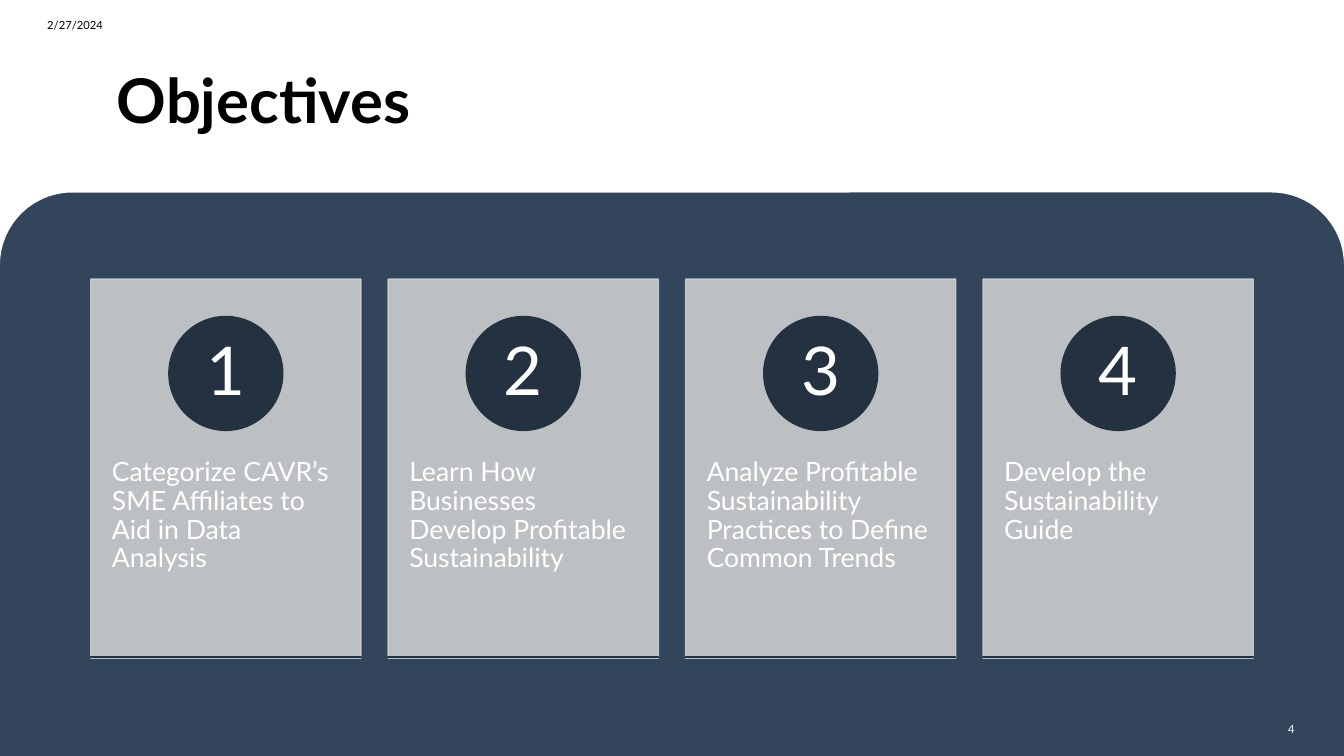
import math

from lxml import etree
from pptx import Presentation
from pptx import util as u
from pptx.dml.color import RGBColor
from pptx.enum import shapes, text
from pptx.oxml import ns

COLORS = {
    "navy": "33455B",
    "dark": "243141",
    "card": "CDCECF",
    "white": "FFFFFF",
    "black": "000000",
}
FONT = "Lato"
WIDTH, HEIGHT = 13.33, 7.5
OBJECTIVES = [
    "Categorize CAVR’s SME Affiliates to Aid in Data Analysis",
    "Learn How Businesses Develop Profitable Sustainability",
    "Analyze Profitable Sustainability Practices to Define Common Trends",
    "Develop the Sustainability Guide",
]
CARD_LEFT, CARD_TOP, CARD_PITCH = 0.9, 2.77, 2.95
CARD_WIDTH, CARD_HEIGHT = 2.68, 3.76
CIRCLE, NUMBER = 1.13, 0.8


def color(name):
    return RGBColor.from_string(COLORS[name])


def set_all(target, values):
    for name, value in values.items():
        setattr(target, name, value)


def set_opacity(shape, percent):
    for fill_color in shape._element.spPr.iter(ns.qn("a:srgbClr")):
        alpha = etree.SubElement(fill_color, ns.qn("a:alpha"))
        alpha.set("val", str(percent * 1000))


def add_block(page, kind, at, fill, opacity=None):
    """Add a filled shape with a 1 pt outline of the same colour."""
    shape = page.shapes.add_shape(kind, *map(u.Inches, at))
    shape.shadow.inherit = False
    shape.fill.solid()
    shape.fill.fore_color.rgb = color(fill)
    shape.line.color.rgb = color(fill)
    shape.line.width = u.Pt(1)
    if opacity:
        set_opacity(shape, opacity)


def add_text(page, at, words, size, fill, bold=False, frame=None, para=None):
    """Add a one-paragraph text box; frame and para hold format values."""
    box = page.shapes.add_textbox(*map(u.Inches, at))
    box.text_frame.word_wrap = True
    set_all(box.text_frame, frame or {})
    paragraph = box.text_frame.paragraphs[0]
    set_all(paragraph, para or {})
    span = paragraph.add_run()
    span.text = words
    set_all(span.font, {"name": FONT, "size": u.Pt(size), "bold": bold})
    span.font.color.rgb = color(fill)


def add_header(page):
    """Add the white band whose lower edge curves round the navy panel."""
    radius, bottom = 0.72, 2.63
    angles = [math.radians(degree) for degree in range(0, 181, 3)]
    edge = []
    for angle in angles:
        center = WIDTH - radius if angle <= math.pi / 2 else radius
        edge.append((center + radius * math.cos(angle),
                     bottom - radius * math.sin(angle)))
    points = [(WIDTH, 0)] + edge
    builder = page.shapes.build_freeform(0, 0)
    builder.add_line_segments([(u.Inches(x), u.Inches(y)) for x, y in points])
    band = builder.convert_to_shape()
    band.shadow.inherit = False
    band.fill.solid()
    band.fill.fore_color.rgb = color("white")
    band.line.fill.background()


def add_card(page, index, objective):
    left = CARD_LEFT + index * CARD_PITCH
    rectangle, oval = shapes.MSO_SHAPE.RECTANGLE, shapes.MSO_SHAPE.OVAL

    # Panel and description
    add_block(page, rectangle, (left, CARD_TOP, CARD_WIDTH, CARD_HEIGHT),
              "card", opacity=90)
    side, end = u.Inches(0.21), u.Inches(0.36)
    add_text(page, (left, 4.19, CARD_WIDTH, 2.25), objective, 19, "white",
             frame={"margin_left": side, "margin_right": side,
                    "margin_top": end, "margin_bottom": end},
             para={"line_spacing": 0.9})

    # Numbered circle
    add_block(page, oval,
              (left + (CARD_WIDTH - CIRCLE) / 2, 3.14, CIRCLE, CIRCLE), "dark")
    side, end = u.Inches(0.09), u.Inches(0.01)
    add_text(page, (left + (CARD_WIDTH - NUMBER) / 2, 3.31, NUMBER, NUMBER),
             str(index + 1), 48, "white",
             frame={"margin_left": side, "margin_right": side,
                    "margin_top": end, "margin_bottom": end,
                    "vertical_anchor": text.MSO_ANCHOR.MIDDLE},
             para={"line_spacing": 0.9, "alignment": text.PP_ALIGN.CENTER})

    # Bottom rule
    add_block(page, rectangle, (left, 6.52, CARD_WIDTH, 0), "dark")


def main():
    deck = Presentation()
    deck.slide_width, deck.slide_height = u.Inches(WIDTH), u.Inches(HEIGHT)
    page = deck.slides.add_slide(deck.slide_layouts[6])
    page.background.fill.solid()
    page.background.fill.fore_color.rgb = color("navy")

    # Header, date and page number
    middle = {"vertical_anchor": text.MSO_ANCHOR.MIDDLE}
    add_header(page)
    add_text(page, (1.06, 0.29, 10.9, 1.47), "Objectives", 44, "black",
             bold=True, frame=middle, para={"line_spacing": 0.9})
    add_text(page, (0.37, 0.07, 3, 0.35), "2/27/2024", 8, "black",
             frame=middle, para={"space_after": u.Pt(6)})
    add_text(page, (12.47, 7.03, 0.47, 0.4), "4", 8, "white", frame=middle,
             para={"space_after": u.Pt(6),
                   "alignment": text.PP_ALIGN.RIGHT})

    # Objective cards
    for index, objective in enumerate(OBJECTIVES):
        add_card(page, index, objective)

    deck.save("out.pptx")


if __name__ == "__main__":
    main()
